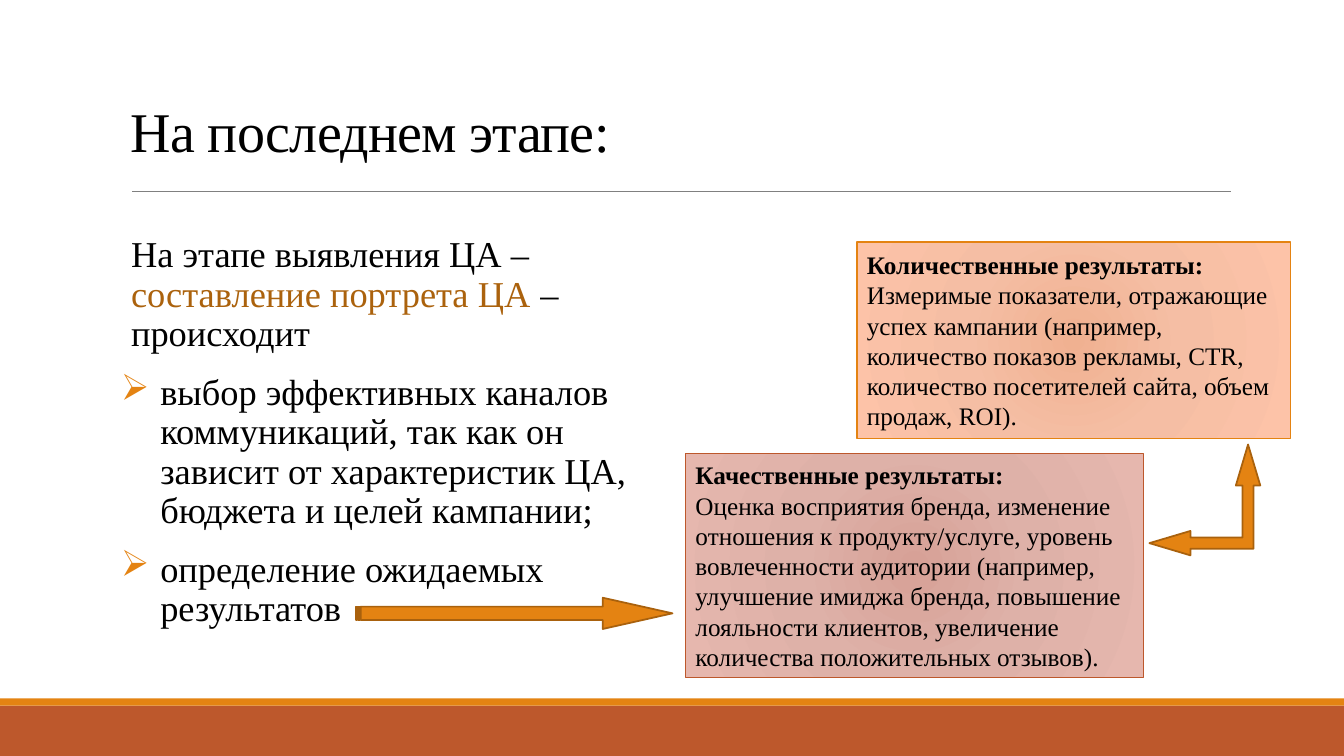
from lxml import etree
from pptx import Presentation
from pptx.dml.color import RGBColor
from pptx.enum.shapes import MSO_CONNECTOR, MSO_SHAPE
from pptx.enum.text import MSO_ANCHOR, PP_ALIGN
from pptx.oxml import parse_xml
from pptx.oxml.ns import nsdecls, qn
from pptx.util import Inches, Pt

RECT = MSO_SHAPE.RECTANGLE
CORNER = MSO_SHAPE.LEFT_UP_ARROW
STRIPED = MSO_SHAPE.STRIPED_RIGHT_ARROW
LINE = MSO_CONNECTOR.STRAIGHT
MIDDLE = MSO_ANCHOR.MIDDLE
LEFT = PP_ALIGN.LEFT

ORANGE = "E48312"
RUST = "BD582C"
BROWN = "A9610D"
BLACK = "000000"


def tint(code):
    return RGBColor.from_string(code)


class Board:
    font = "Times New Roman"

    def __init__(self, slide):
        self.slide = slide

    def shape(self, kind, box, fill, edge=None, width=1, adjust=()):
        item = self.slide.shapes.add_shape(kind, *map(Inches, box))
        item.shadow.inherit = False
        item.fill.solid()
        item.fill.fore_color.rgb = tint(fill)
        if edge:
            item.line.color.rgb = tint(edge)
            item.line.width = Pt(width)
        else:
            item.line.fill.background()
        for spot, value in enumerate(adjust):
            item.adjustments[spot] = value
        return item

    def rule(self, start, end, color, width):
        item = self.slide.shapes.add_connector(LINE, *map(Inches, start + end))
        item.line.color.rgb = tint(color)
        item.line.width = Pt(width)
        etree.SubElement(item._element.spPr, qn("a:effectLst"))

    def glow(self, item, stops):
        marks = "".join(
            f'<a:gs pos="{spot * 1000}"><a:srgbClr val="{code}"/></a:gs>'
            for spot, code in stops
        )
        fill = parse_xml(
            f'<a:gradFill {nsdecls("a")} rotWithShape="1"><a:gsLst>{marks}</a:gsLst>'
            '<a:path path="circle"><a:fillToRect l="100000" t="100000" '
            'r="100000" b="100000"/></a:path></a:gradFill>'
        )
        props = item._element.spPr
        props.replace(props.find(qn("a:solidFill")), fill)

    def fit(self, frame, paras, size):
        frame.word_wrap = True
        frame.vertical_anchor = MIDDLE
        for count, parts in enumerate(paras):
            para = frame.add_paragraph() if count else frame.paragraphs[0]
            para.alignment = LEFT
            for text, color, bold in parts:
                run = para.add_run()
                run.text = text
                run.font.name = self.font
                run.font.size = Pt(size)
                run.font.bold = bold
                run.font.color.rgb = tint(color)

    def text(self, box, paras, size):
        frame = self.slide.shapes.add_textbox(*map(Inches, box)).text_frame
        self.fit(frame, paras, size)
        return frame

    def card(self, box, paras, edge, stops):
        item = self.shape(RECT, box, stops[0][1], edge)
        self.glow(item, stops)
        self.fit(item.text_frame, paras, 18)

    def bullet(self, para, indent, mark=None):
        props = para._p.get_or_add_pPr()
        props.set("marL", str(Inches(indent)))
        if mark:
            props.set("indent", str(-Inches(indent)))
            color = etree.SubElement(props, qn("a:buClr"))
            etree.SubElement(color, qn("a:srgbClr"), val=ORANGE)
            etree.SubElement(props, qn("a:buChar"), char=mark)


def main():
    deck = Presentation()
    deck.slide_width, deck.slide_height = Inches(13.33), Inches(7.5)
    board = Board(deck.slides.add_slide(deck.slide_layouts[6]))

    board.shape(RECT, (0, 7, 13.33, 0.5), RUST)
    board.shape(RECT, (0, 6.93, 13.33, 0.07), ORANGE)
    board.rule((1.31, 1.9), (12.21, 1.9), "808080", 0.5)

    title = board.text(
        (1.2, 0.8, 11, 1.08), [[("На последнем этапе:", BLACK, False)]], 40
    ).paragraphs[0]
    title.line_spacing = 0.85
    title.runs[0].font._element.set("spc", "-50")

    body = board.text((1.2, 2.02, 5.6, 4.55), [
        [("На этапе выявления ЦА – ", BLACK, False),
         ("составление портрета ЦА ", "AB620D", False),
         ("– происходит", BLACK, False)],
        [("выбор эффективных каналов коммуникаций, так как он зависит от "
          "характеристик ЦА, бюджета и целей кампании;", BLACK, False)],
        [("определение ожидаемых результатов", BLACK, False)],
    ], 26)
    body.margin_left = body.margin_right = 0
    for para in body.paragraphs:
        para.line_spacing = 0.9
        para.space_before = Pt(12)
        para.space_after = Pt(2)
    intro, *points = body.paragraphs
    board.bullet(intro, 0.1)
    for para in points:
        board.bullet(para, 0.39, "➢")

    board.card((8.5, 2.4, 4.3, 1.95), [
        [("Количественные результаты:", BLACK, True),
         (" Измеримые показатели, отражающие успех кампании (например, "
          "количество показов рекламы, CTR, количество посетителей сайта, "
          "объем продаж, ROI).", BLACK, False)],
    ], ORANGE, [(0, "F0B191"), (45, "F5BEA4"), (100, "FDC3A8")])
    board.card((6.8, 4.5, 4.54, 2.22), [
        [("Качественные результаты:", BLACK, True)],
        [("Оценка восприятия бренда, изменение отношения к продукту/услуге, "
          "уровень вовлеченности аудитории (например, улучшение имиджа бренда, "
          "повышение лояльности клиентов, увеличение количества положительных "
          "отзывов).", BLACK, False)],
    ], RUST, [(0, "D7A197"), (45, "DEB1A8"), (100, "E6B7AE")])

    board.shape(CORNER, (11.4, 4.41, 1.1, 1.1), ORANGE, BROWN, 1.25, (0.1, 0.11, 0.37))
    board.shape(STRIPED, (3.53, 5.93, 3.14, 0.31), ORANGE, BROWN, 1.25, (0.43, 2.23))

    deck.save("out.pptx")


if __name__ == "__main__":
    main()
